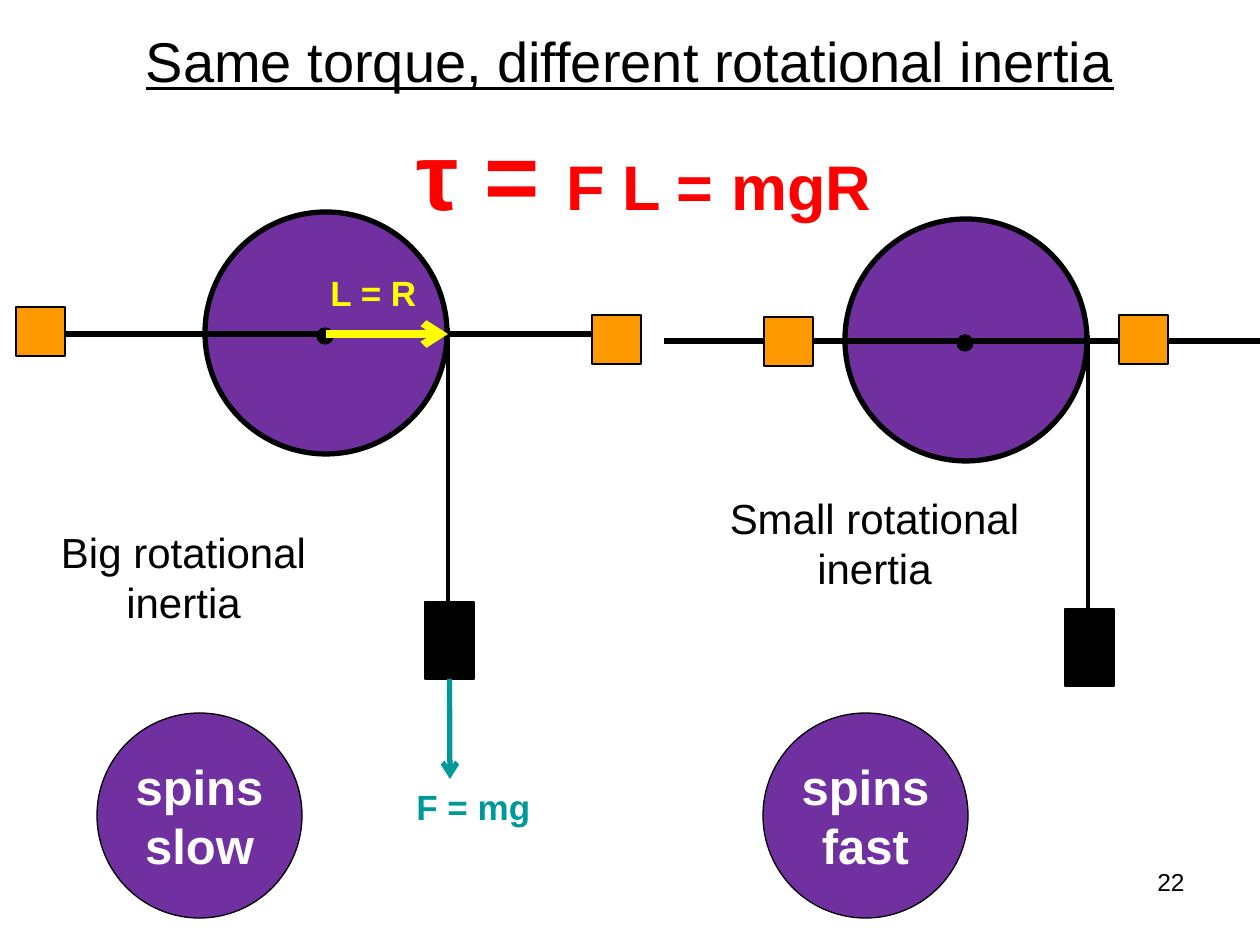
from dataclasses import dataclass

from lxml import etree
from pptx import Presentation
from pptx import util as u
from pptx.dml.color import RGBColor
from pptx.enum import shapes, text
from pptx.oxml import ns

PX = 914400 / 126  # EMU in one px


@dataclass(frozen=True)
class Theme:
    font: str = "Arial"
    ink: str = "000000"
    paper: str = "FFFFFF"
    wheel: str = "7030A0"
    weight: str = "FF9900"
    lever: str = "FFFF00"
    force: str = "009999"
    torque: str = "FF0000"
    title: int = 32
    label: int = 24
    verdict: int = 28
    formula: int = 20
    tau: int = 54
    product: int = 36
    number: int = 14


THEME = Theme()
RECT, OVAL = shapes.MSO_SHAPE.RECTANGLE, shapes.MSO_SHAPE.OVAL
CENTER, RIGHT = text.PP_ALIGN.CENTER, text.PP_ALIGN.RIGHT


def px(*lengths):
    return [u.Emu(round(length * PX)) for length in lengths]


def add_part(parent, kind, box, color, line_width=0.75):
    part = parent.add_shape(kind, *px(*box))
    part.shadow.inherit = False
    part.fill.solid()
    part.fill.fore_color.rgb = RGBColor.from_string(color)
    part.line.color.rgb = RGBColor.from_string(THEME.ink)
    part.line.width = u.Pt(line_width)
    return part


def add_line(parent, start, end, color, width, arrow=False):
    line = parent.add_connector(shapes.MSO_CONNECTOR.STRAIGHT, *px(*start, *end))
    line.line.color.rgb = RGBColor.from_string(color)
    line.line.width = u.Pt(width)
    if arrow:
        etree.SubElement(line.line._get_or_add_ln(), ns.qn("a:tailEnd"), type="arrow")
    etree.SubElement(line._element.spPr, ns.qn("a:effectLst"))
    return line


def write(frame, paragraphs, color, align=None, wrap=False, grow=True, **font):
    """Each paragraph is a list of (wording, size) runs."""
    frame_format = {
        "word_wrap": wrap,
        "auto_size": (text.MSO_AUTO_SIZE.SHAPE_TO_FIT_TEXT if grow
                      else text.MSO_AUTO_SIZE.NONE),
    }
    for name, value in frame_format.items():
        setattr(frame, name, value)
    for index, runs in enumerate(paragraphs):
        paragraph = frame.paragraphs[0] if index == 0 else frame.add_paragraph()
        paragraph.alignment = align
        for wording, size in runs:
            run = paragraph.add_run()
            run.text = wording
            run_format = {"name": THEME.font, "size": u.Pt(size), **font}
            for name, value in run_format.items():
                setattr(run.font, name, value)
            run.font.color.rgb = RGBColor.from_string(color)


def add_text(slide, box, paragraphs, color, **options):
    write(slide.shapes.add_textbox(*px(*box)).text_frame, paragraphs, color, **options)


def add_apparatus(slide, left, top, weights):
    """Wheel on a weighted bar with a hanging block; returns the block."""
    parts = slide.shapes.add_group_shape().shapes
    add_part(parts, OVAL, (left, top, 242, 242), THEME.wheel, 3)
    bar_y = top + 122
    add_line(parts, (left - 181, bar_y), (left + 424, bar_y), THEME.ink, 3)
    for weight_left, weight_top in weights:
        add_part(parts, RECT, (weight_left, weight_top, 49, 49), THEME.weight)
    add_part(parts, OVAL, (left + 112, top + 116, 16, 16), THEME.ink)
    add_line(parts, (left + 243, top + 116), (left + 243, top + 396), THEME.ink, 2.25)
    return add_part(parts, RECT, (left + 220, top + 390, 49, 77), THEME.ink)


def add_verdict(slide, left, words):
    disc = add_part(slide.shapes, OVAL, (left, 713, 205, 205), THEME.wheel)
    disc.text_frame.vertical_anchor = text.MSO_ANCHOR.MIDDLE
    write(disc.text_frame, [[(word, THEME.verdict)] for word in words],
          THEME.paper, align=CENTER, grow=False, bold=True)


def set_title(slide, wording):
    title = slide.shapes.title
    title.left, title.top, title.width, title.height = px(0, 20, 1260, 81)
    title.text_frame.vertical_anchor = text.MSO_ANCHOR.TOP
    write(title.text_frame, [[(wording, THEME.title)]], THEME.ink,
          align=CENTER, wrap=True, grow=False, underline=True)


def main():
    deck = Presentation()
    deck.slide_width, deck.slide_height = px(1260, 945)
    slide = deck.slides.add_slide(deck.slide_layouts[5])
    set_title(slide, "Same torque, different rotational inertia")

    # The two set-ups: weights far out, then close in
    block = add_apparatus(slide, 205, 212, [(592, 315), (16, 307)])
    add_apparatus(slide, 845, 219, [(1119, 315), (764, 317)])

    # What each set-up shows
    for box, size_word in (((48, 520, 271, 113), "Big"), ((717, 486, 315, 113), "Small")):
        lines = [f"{size_word} rotational", "inertia"]
        add_text(slide, box, [[(line, THEME.label)] for line in lines],
                 THEME.ink, align=CENTER)
    add_verdict(slide, 97, ["spins", "slow"])
    add_verdict(slide, 763, ["spins", "fast"])

    # Lever arm
    add_line(slide.shapes, (326, 334), (448, 334), THEME.lever, 4.5, arrow=True)
    add_text(slide, (318, 265, 112, 55), [[("L = R", THEME.formula)]],
             THEME.lever, bold=True)

    # Force on the block
    pull = add_line(slide.shapes, (450, 679), (450, 779), THEME.force, 3, arrow=True)
    pull.begin_connect(block, 2)
    add_text(slide, (404, 779, 140, 55), [[("F = mg", THEME.formula)]],
             THEME.force, bold=True)

    # Torque formula
    add_text(slide, (404, 110, 491, 127),
             [[("τ = ", THEME.tau), ("F L = mgR", THEME.product)]],
             THEME.torque, wrap=True, bold=True)

    # Slide number
    add_text(slide, (903, 861, 294, 66), [[("22", THEME.number)]],
             THEME.ink, align=RIGHT, wrap=True, grow=False)

    deck.save("out.pptx")


if __name__ == "__main__":
    main()
